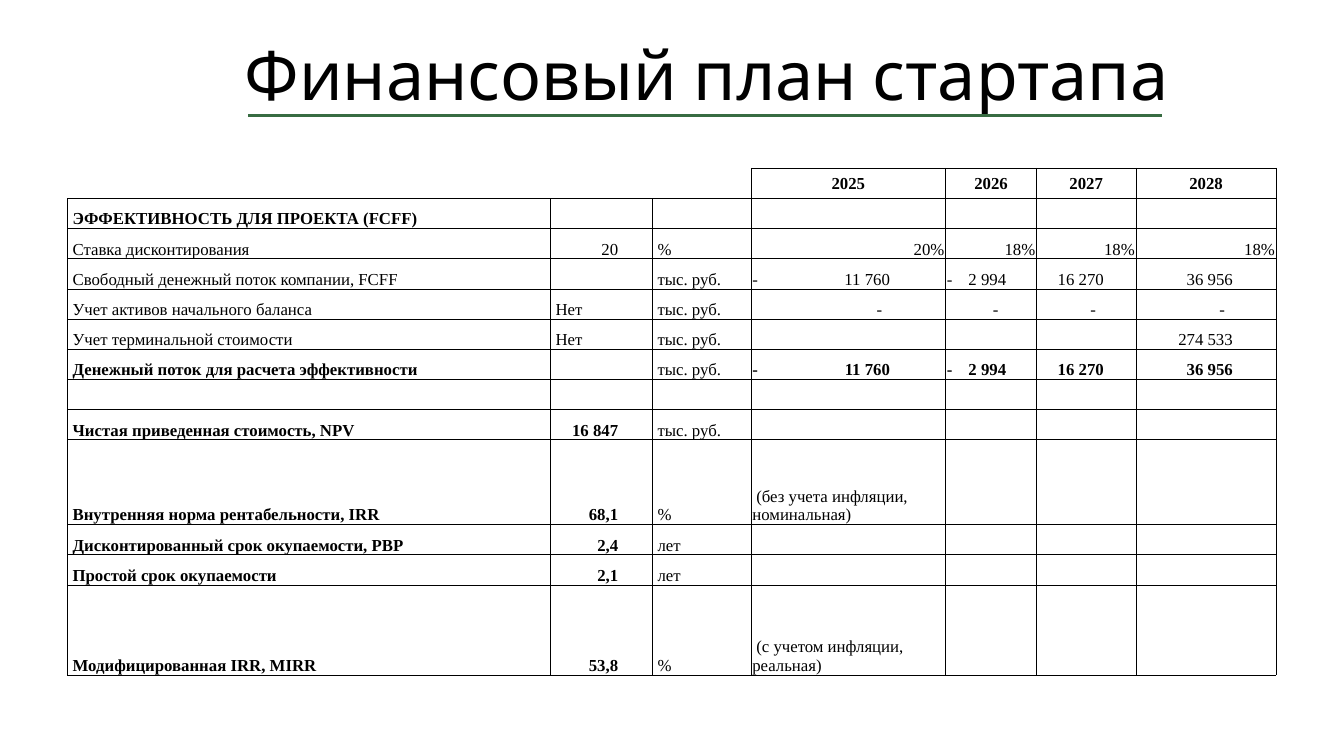
from dataclasses import dataclass

import pptx
import pptx.dml.color
import pptx.enum.shapes
import pptx.enum.text
import pptx.oxml
import pptx.oxml.ns
import pptx.util
from lxml import etree

Cm = pptx.util.Cm
Pt = pptx.util.Pt
Align = pptx.enum.text.PP_ALIGN
Anchor = pptx.enum.text.MSO_ANCHOR
qn = pptx.oxml.ns.qn

BLACK = "000000"
GREEN = "386C42"
WHITE = "FFFFFF"
SERIF = "Times New Roman"
EDGE = 0.03
GAP = 0.13
DASH = 0.2
LOW = 0.76
YEARS = ("2025", "2026", "2027", "2028")
BLANK = ("", "", "", "")
FLOW = ("-\t11 760", "-\t2 994", "16 270", "36 956")


@dataclass
class Column:
    width: float
    inset: float


@dataclass
class Row:
    name: str
    value: str = ""
    unit: str = ""
    years: tuple[str, ...] = BLANK
    bold: bool = True
    height: float = LOW


COLUMNS = [
    Column(12.17, EDGE), Column(2.57, 0.86), Column(2.49, EDGE), Column(4.9, 1.4),
    Column(2.29, 0.76), Column(2.51, 0.81), Column(3.53, 1.09),
]
ROWS = [
    Row("ЭФФЕКТИВНОСТЬ ДЛЯ ПРОЕКТА (FCFF)"),
    Row("Ставка дисконтирования", "20", "%", ("20%", "18%", "18%", "18%"), False),
    Row("Свободный денежный поток компании, FCFF", "", "тыс. руб.", FLOW, False),
    Row("Учет активов начального баланса", "Нет", "тыс. руб.", ("-",) * 4, False),
    Row("Учет терминальной стоимости", "Нет", "тыс. руб.", ("", "", "", "274 533"), False),
    Row("Денежный поток для расчета эффективности", "", "тыс. руб.", FLOW),
    Row(""),
    Row("Чистая приведенная стоимость, NPV", "16 847", "тыс. руб."),
    Row("Внутренняя норма рентабельности, IRR", "68,1", "%",
        ("(без учета инфляции, номинальная)", "", "", ""), height=2.14),
    Row("Дисконтированный срок окупаемости, PBP", "2,4", "лет"),
    Row("Простой срок окупаемости", "2,1", "лет"),
    Row("Модифицированная IRR, MIRR", "53,8", "%",
        ("(с учетом инфляции, реальная)", "", "", ""), height=2.27),
]


def color(code: str) -> pptx.dml.color.RGBColor:
    return pptx.dml.color.RGBColor.from_string(code)


def write(frame, text: str, *, size: float = 12, face: str = SERIF, bold: bool = False,
          align=Align.LEFT, indent: float = 0, tab: float = 0, line: float = 0) -> None:
    para = frame.paragraphs[0]
    para.alignment = align
    if line:
        para.line_spacing = line
    props = para._p.get_or_add_pPr()
    if indent:
        props.set("indent", str(Cm(indent)))
    if tab:
        stops = etree.SubElement(props, qn("a:tabLst"))
        etree.SubElement(stops, qn("a:tab"), pos=str(Cm(tab)), algn="r")
    if not text:
        etree.SubElement(para._p, qn("a:endParaRPr"), sz=str(size * 100))
        return
    run = para.add_run()
    run.text = text
    run.font.size = Pt(size)
    run.font.name = face
    run.font.bold = bold
    run.font.color.rgb = color(BLACK)


def border(cell, sides: str) -> None:
    props = cell._tc.get_or_add_tcPr()
    for side in sides:
        line = etree.SubElement(props, qn(f"a:ln{side}"), w=str(Pt(0.5)))
        fill = etree.SubElement(line, qn("a:solidFill"))
        etree.SubElement(fill, qn("a:srgbClr"), val=BLACK)
    cell.fill.solid()
    cell.fill.fore_color.rgb = color(WHITE)


def pad(cell, left: float = EDGE, right: float = EDGE) -> None:
    cell.margin_left, cell.margin_right = Cm(left), Cm(right)
    cell.margin_top, cell.margin_bottom = Cm(EDGE), Cm(0)


def fill_cell(cell, text: str, index: int, bold: bool) -> None:
    column = COLUMNS[index]
    cell.vertical_anchor = Anchor.BOTTOM
    if index in (0, 2) or text == "Нет":
        pad(cell, left=GAP)
        write(cell.text_frame, text, bold=bold and index == 0)
    elif "\t" in text:
        pad(cell)
        write(cell.text_frame, text, bold=bold, tab=column.width - column.inset - EDGE)
    elif text.startswith("("):
        pad(cell)
        write(cell.text_frame, text, indent=GAP - EDGE)
    else:
        inset = EDGE if text.endswith("%") else column.inset
        pad(cell, right=inset + DASH if text == "-" else inset)
        write(cell.text_frame, text, bold=bold, align=Align.RIGHT)


def add_title(slide) -> None:
    box = slide.shapes.add_textbox(Cm(3.2), Cm(1.02), Cm(29.21), Cm(1.9))
    box.text_frame.word_wrap = True
    box.text_frame.vertical_anchor = Anchor.MIDDLE
    write(box.text_frame, "Финансовый план стартапа", size=48.6, face="Karla",
          align=Align.CENTER, line=0.9)
    rule = slide.shapes.add_connector(
        pptx.enum.shapes.MSO_CONNECTOR.STRAIGHT, Cm(6.25), Cm(2.92), Cm(29.29), Cm(2.92))
    rule.line.color.rgb = color(GREEN)
    rule.line.width = Pt(2)
    etree.SubElement(rule._element.spPr, qn("a:effectLst"))


def add_plan(slide) -> None:
    width = sum(column.width for column in COLUMNS)
    height = LOW + sum(row.height for row in ROWS)
    table = slide.shapes.add_table(
        len(ROWS) + 1, len(COLUMNS), Cm(1.7), Cm(4.24), Cm(width), Cm(height)).table
    table.first_row = False
    table.horz_banding = False
    for index, column in enumerate(COLUMNS):
        table.columns[index].width = Cm(column.width)
    table.rows[0].height = Cm(LOW)
    for index, text in enumerate(("", "", "") + YEARS):
        cell = table.cell(0, index)
        border(cell, "LRTB" if text else "RB" if index == 2 else "B")
        pad(cell)
        cell.vertical_anchor = Anchor.MIDDLE
        write(cell.text_frame, text, bold=True, align=Align.CENTER)
    for line, row in enumerate(ROWS, 1):
        table.rows[line].height = Cm(row.height)
        for index, text in enumerate((row.name, row.value, row.unit) + row.years):
            cell = table.cell(line, index)
            border(cell, "LRTB")
            fill_cell(cell, text, index, row.bold)


def main() -> None:
    deck = pptx.Presentation()
    deck.slide_width, deck.slide_height = Cm(33.87), Cm(19.05)
    slide = deck.slides.add_slide(deck.slide_layouts[6])
    add_title(slide)
    add_plan(slide)
    deck.save("out.pptx")


if __name__ == "__main__":
    main()
